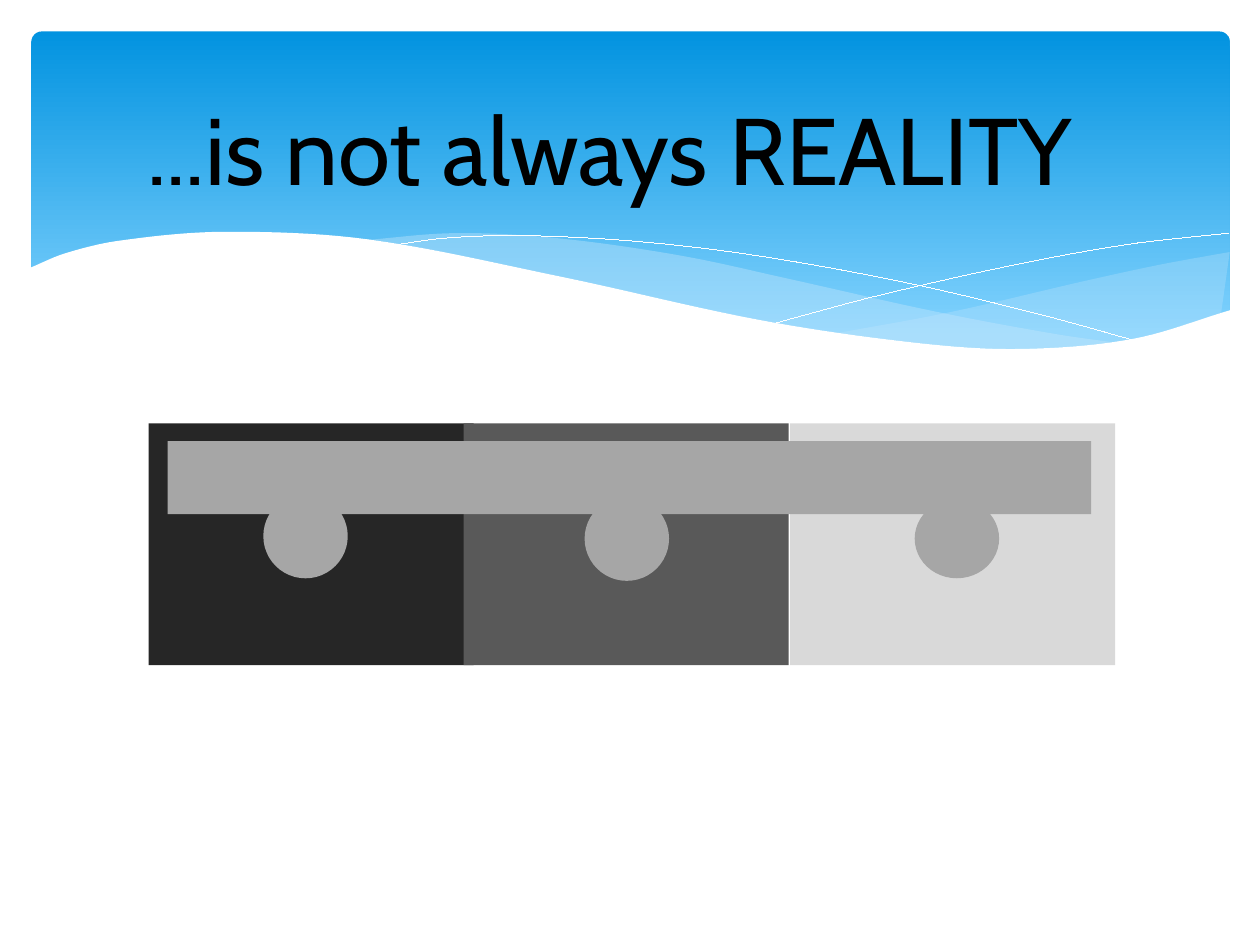
"""Build the title slide about grey dots on three backgrounds."""
import pptx
import pptx.util
import pptx.dml.color
import pptx.enum.shapes
import pptx.enum.text
import pptx.oxml.ns
import lxml.etree

Inches = pptx.util.Inches
Shapes = pptx.enum.shapes.MSO_SHAPE

WHITE, PALE_BLUE, DOT_GREY = "FFFFFF", "C6E7FC", "A6A6A6"
BANNER_STOPS = [(0, "0293E0"), (0.9, "83D3FE")]
BANNER_HEM = 3.29
STEPS_PER_SPAN = 10

CREST = [(0.23, 2.13), (0.52, 2.01), (0.95, 1.91), (1.77, 1.84), (2.92, 1.9), (4.47, 2.2),
         (6.03, 2.54), (7.26, 2.72), (8.09, 2.77), (8.99, 2.69), (9.77, 2.46)]
MIDDLE_SWELL = [(2.86, 1.91), (3.61, 1.85), (4.42, 1.89), (5.41, 2.03),
                (6.29, 2.22), (7.41, 2.47), (8.37, 2.65), (8.93, 2.73)]
RIGHT_SWELL = [(6.61, 2.65), (7.53, 2.48), (8.61, 2.23), (9.21, 2.1), (9.76, 2)]
FALLING_LINE = [(3.09, 1.95), (3.53, 1.89), (4.16, 1.87), (5.1, 1.92),
                (6.08, 2.04), (7.27, 2.26), (8.31, 2.51), (9.07, 2.72)]
RISING_LINE = [(6.13, 2.57), (6.95, 2.35), (8.06, 2.1), (8.95, 1.94), (9.75, 1.85)]

PANEL_TOP, PANEL_WIDTH, PANEL_HEIGHT = 3.36, 2.58, 1.92
PANELS = [(1.18, "262626"), (3.68, "595959"), (6.27, "D9D9D9")]
DOT_WIDTH = 0.67
DOTS = [(7.26, 3.96, 0.63), (4.64, 3.94, 0.67), (2.09, 3.92, 0.67)]


def rgb(value):
    """Return the colour for a hex string."""
    return pptx.dml.color.RGBColor.from_string(value)


def smooth(knots):
    """Return points of a smooth curve through knots, by cubic Hermite spans."""
    neighbours = zip([knots[0]] + knots[:-1], knots[1:] + [knots[-1]])
    slopes = [(after[1] - before[1]) / (after[0] - before[0]) for before, after in neighbours]
    points = [knots[0]]
    for i, ((x0, y0), (x1, y1)) in enumerate(zip(knots, knots[1:])):
        run = x1 - x0
        for step in range(1, STEPS_PER_SPAN + 1):
            t = step / STEPS_PER_SPAN
            ease = t * t * (3 - 2 * t)
            leaving = run * slopes[i] * t * (1 - t) ** 2
            arriving = run * slopes[i + 1] * t * t * (1 - t)
            points.append((x0 + run * t, y0 + (y1 - y0) * ease + leaving - arriving))
    return points


def paint(shape, color, opacity=100):
    """Give a shape a flat fill without outline or shadow."""
    shape.shadow.inherit = False
    shape.line.fill.background()
    shape.fill.solid()
    shape.fill.fore_color.rgb = rgb(color)
    if opacity < 100:
        qn = pptx.oxml.ns.qn
        tint = shape.fill._xPr.find(f"{qn('a:solidFill')}/{qn('a:srgbClr')}")
        lxml.etree.SubElement(tint, qn("a:alpha"), val=str(opacity * 1000))


def add_block(slide, kind, left, top, width, height, color):
    """Add a flat preset shape and return it."""
    block = slide.shapes.add_shape(
        kind, Inches(left), Inches(top), Inches(width), Inches(height))
    paint(block, color)
    return block


def add_outline(slide, points, close):
    """Add a freeform through points given in inches."""
    start, *rest = [(Inches(x), Inches(y)) for x, y in points]
    builder = slide.shapes.build_freeform(*start, scale=1.0)
    builder.add_line_segments(rest, close=close)
    return builder.convert_to_shape()


def add_swell(slide, knots, crest, opacity):
    """Add a translucent wave between its own curve and the crest below."""
    left, right = knots[0][0], knots[-1][0]
    lower_edge = [point for point in crest if left < point[0] < right]
    swell = add_outline(slide, smooth(knots) + lower_edge[::-1], True)
    paint(swell, PALE_BLUE, opacity)


def add_hairline(slide, knots):
    """Add a thin open curve."""
    hairline = add_outline(slide, smooth(knots), False)
    hairline.shadow.inherit = False
    hairline.fill.background()
    hairline.line.color.rgb = rgb(WHITE)
    hairline.line.width = pptx.util.Pt(0.01)


def add_banner(slide):
    """Add the blue gradient banner and the waves along its lower edge."""
    banner = add_block(slide, Shapes.ROUNDED_RECTANGLE, 0.25, 0.25, 9.51, 2.7,
                       BANNER_STOPS[0][1])
    banner.adjustments[0] = 0.03
    banner.fill.gradient()
    banner.fill.gradient_angle = 270
    for stop, (position, color) in zip(banner.fill.gradient_stops, BANNER_STOPS):
        stop.position = position
        stop.color.rgb = rgb(color)

    crest = smooth(CREST)
    for knots, opacity in ((RIGHT_SWELL, 29), (MIDDLE_SWELL, 40)):
        add_swell(slide, knots, crest, opacity)
    for knots in (FALLING_LINE, RISING_LINE):
        add_hairline(slide, knots)
    hem = [(crest[-1][0], BANNER_HEM), (crest[0][0], BANNER_HEM)]
    paint(add_outline(slide, crest + hem, True), WHITE)


def add_illusion(slide):
    """Add three backgrounds with equal grey dots joined by a bar."""
    for left, shade in PANELS:
        add_block(slide, Shapes.RECTANGLE, left, PANEL_TOP, PANEL_WIDTH, PANEL_HEIGHT, shade)
    for left, top, height in DOTS:
        add_block(slide, Shapes.OVAL, left, top, DOT_WIDTH, height, DOT_GREY)
    add_block(slide, Shapes.RECTANGLE, 1.33, 3.5, 7.33, 0.58, DOT_GREY)


def write_text(frame, text, *, font, size, color, align):
    """Write one formatted paragraph into a text frame."""
    frame.word_wrap = True
    frame.auto_size = pptx.enum.text.MSO_AUTO_SIZE.SHAPE_TO_FIT_TEXT
    frame.vertical_anchor = pptx.enum.text.MSO_ANCHOR.MIDDLE
    paragraph = frame.paragraphs[0]
    paragraph.alignment = align
    run = paragraph.add_run()
    run.text = text
    run.font.name = font
    run.font.size = pptx.util.Pt(size)
    run.font.color.rgb = rgb(color)


def add_title(slide, text):
    """Place the title in front of the banner."""
    title = slide.shapes.title
    title.left, title.top = Inches(0.83), Inches(0.67)
    title.width, title.height = Inches(8.02), Inches(1.01)
    write_text(title.text_frame, text, font="Cabin", size=54, color="000000",
               align=pptx.enum.text.PP_ALIGN.CENTER)
    slide.shapes._spTree.append(title._element)


def main():
    """Build and save the slide."""
    deck = pptx.Presentation()
    deck.slide_width, deck.slide_height = Inches(10), Inches(7.5)
    slide = deck.slides.add_slide(deck.slide_layouts.get_by_name("Title Only"))
    add_banner(slide)
    add_illusion(slide)
    add_title(slide, "...is not always REALITY")
    deck.save("out.pptx")


if __name__ == "__main__":
    main()
